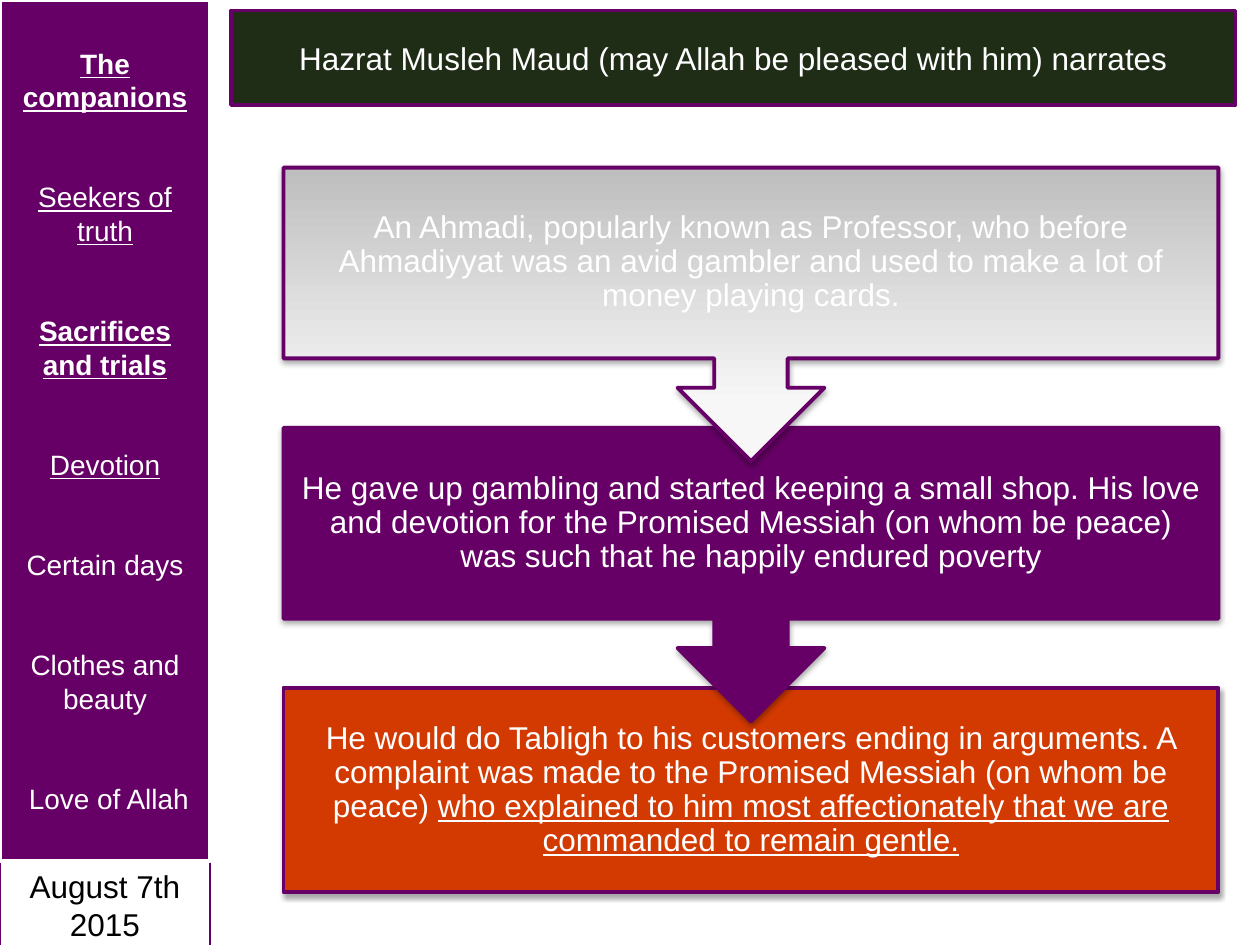
from copy import deepcopy

from pptx import Presentation
from pptx.dml.color import RGBColor
from pptx.enum.shapes import MSO_SHAPE as Shape
from pptx.enum.text import MSO_ANCHOR as Anchor, MSO_AUTO_SIZE as AutoSize, PP_ALIGN as Align
from pptx.oxml import parse_xml
from pptx.oxml.ns import nsdecls
from pptx.util import Pt

# Content
TITLE = "Hazrat Musleh Maud (may Allah be pleased with him) narrates"
DATE = "August 7th 2015"
# topic, bold, underline
TOPICS = [
    ("The companions", True, True),
    ("Seekers of truth", False, True),
    ("Sacrifices and trials", True, True),
    ("Devotion", False, True),
    ("Certain days", False, False),
    ("Clothes and beauty", False, False),
    (" Love of Allah", False, False),
]
# fill, then the runs of the step: text, bold, underline
STEPS = [
    ("silver", [("An Ahmadi, popularly known as Professor, who before Ahmadiyyat was an "
                 "avid gambler and used to make a lot of money playing cards.", False, False)]),
    ("purple", [("He gave up gambling and started keeping a small shop. His love and devotion "
                 "for the Promised Messiah (on whom be peace) was such that he happily endured "
                 "poverty", False, False)]),
    ("orange", [("He would do Tabligh to his customers ending in arguments. A complaint was made "
                 "to the Promised Messiah (on whom be peace) ", False, False),
                ("who explained to him most affectionately that we are commanded to remain "
                 "gentle.", False, True)]),
]

COLORS = {"purple": "660066", "orange": "D33A01", "green": "1F2C16",
          "white": "FFFFFF", "black": "000000"}
SILVER_STOPS = [(0, "BEBEBE"), (0.8, "F7F7F7"), (1, "F8F8F8")]
FONT = "Arial"

# Layout
SIDE_W, SIDE_H = 120, 492
STEP_LEFT, STEP_TOP, STEP_W, STEP_PITCH = 162, 95.76, 534.24, 148.68
CALLOUT_H, CALLOUT_BODY_H, LAST_H = 167.76, 108.72, 116.64

prs = Presentation()
prs.slide_width, prs.slide_height = Pt(720), Pt(540)
slide = prs.slides.add_slide(prs.slide_layouts[6])


def rgb(name):
    return RGBColor.from_string(COLORS[name])


def add_box(kind, left, top, width, height, fill, line, weight):
    box = slide.shapes.add_shape(kind, Pt(left), Pt(top), Pt(width), Pt(height))
    box.shadow.inherit = False
    if fill == "silver":
        fill_silver(box)
    elif fill:
        box.fill.solid()
        box.fill.fore_color.rgb = rgb(fill)
    else:
        box.fill.background()
    box.line.color.rgb = rgb(line)
    box.line.width = Pt(weight)
    return box


def fill_silver(box):
    box.fill.gradient()
    box.fill.gradient_angle = 90
    stop_list = box.fill.gradient_stops[0]._gs.getparent()
    stop_list.append(deepcopy(stop_list[-1]))
    for stop, (position, color) in zip(box.fill.gradient_stops, SILVER_STOPS):
        stop.position = position
        stop.color.rgb = RGBColor.from_string(color)


def add_soft_shadow(box):
    properties = box._element.spPr
    for effects in properties.findall("{*}effectLst"):
        properties.remove(effects)
    properties.append(parse_xml(
        f'<a:effectLst {nsdecls("a")}><a:outerShdw blurRad="{Pt(3.1)}" dist="{Pt(1.8)}" '
        'dir="5400000" rotWithShape="0"><a:srgbClr val="000000"><a:alpha val="35000"/>'
        '</a:srgbClr></a:outerShdw></a:effectLst>'))


def write(holder, paragraphs, size=18, color="white", anchor=Anchor.MIDDLE,
          gap=0, spacing=None, inset=None):
    """Fill a shape with paragraphs, each a list of (text, bold, underline) runs."""
    frame = holder.text_frame
    frame.word_wrap = True
    frame.vertical_anchor = anchor
    if inset is not None:
        frame.margin_left = frame.margin_right = Pt(inset)
        frame.margin_top = frame.margin_bottom = Pt(inset)
    for index, runs in enumerate(paragraphs):
        paragraph = frame.add_paragraph() if index else frame.paragraphs[0]
        paragraph.alignment = Align.CENTER
        if index and gap:
            paragraph.space_before = Pt(gap)
        if spacing:
            paragraph.line_spacing = spacing
        for text, bold, underline in runs:
            run = paragraph.add_run()
            run.text = text
            run.font.name, run.font.size = FONT, Pt(size)
            run.font.bold, run.font.underline = bold, underline
            run.font.color.rgb = rgb(color)


# Steps, from last to first so that each arrow overlaps the next step
last = len(STEPS) - 1
for index in range(last, -1, -1):
    fill, runs = STEPS[index]
    top = STEP_TOP + index * STEP_PITCH
    if index == last:
        kind, height, body_height = Shape.RECTANGLE, LAST_H, LAST_H
    else:
        kind, height, body_height = Shape.UP_ARROW_CALLOUT, CALLOUT_H, CALLOUT_BODY_H
    step = add_box(kind, STEP_LEFT, top, STEP_W, height, fill, "purple", 2.25)
    step.rotation = 0 if index == last else 180
    add_soft_shadow(step)
    body = slide.shapes.add_textbox(Pt(STEP_LEFT), Pt(top), Pt(STEP_W), Pt(body_height))
    write(body, [runs], spacing=0.9, inset=10.08)

# Title bar
title = add_box(Shape.RECTANGLE, 132, 6, 574, 54, "green", "purple", 2)
write(title, [[(TITLE, False, False)]])

# Date and sidebar
date = add_box(Shape.RECTANGLE, 0, SIDE_H, SIDE_W, 51, None, "purple", 0.75)
write(date, [[(DATE, False, False)]], color="black", anchor=Anchor.TOP)
date.text_frame.auto_size = AutoSize.SHAPE_TO_FIT_TEXT

sidebar = add_box(Shape.RECTANGLE, 0, 0, SIDE_W, SIDE_H, "purple", "white", 2)
write(sidebar, [[topic] for topic in TOPICS], size=16, gap=38)

prs.save("out.pptx")
